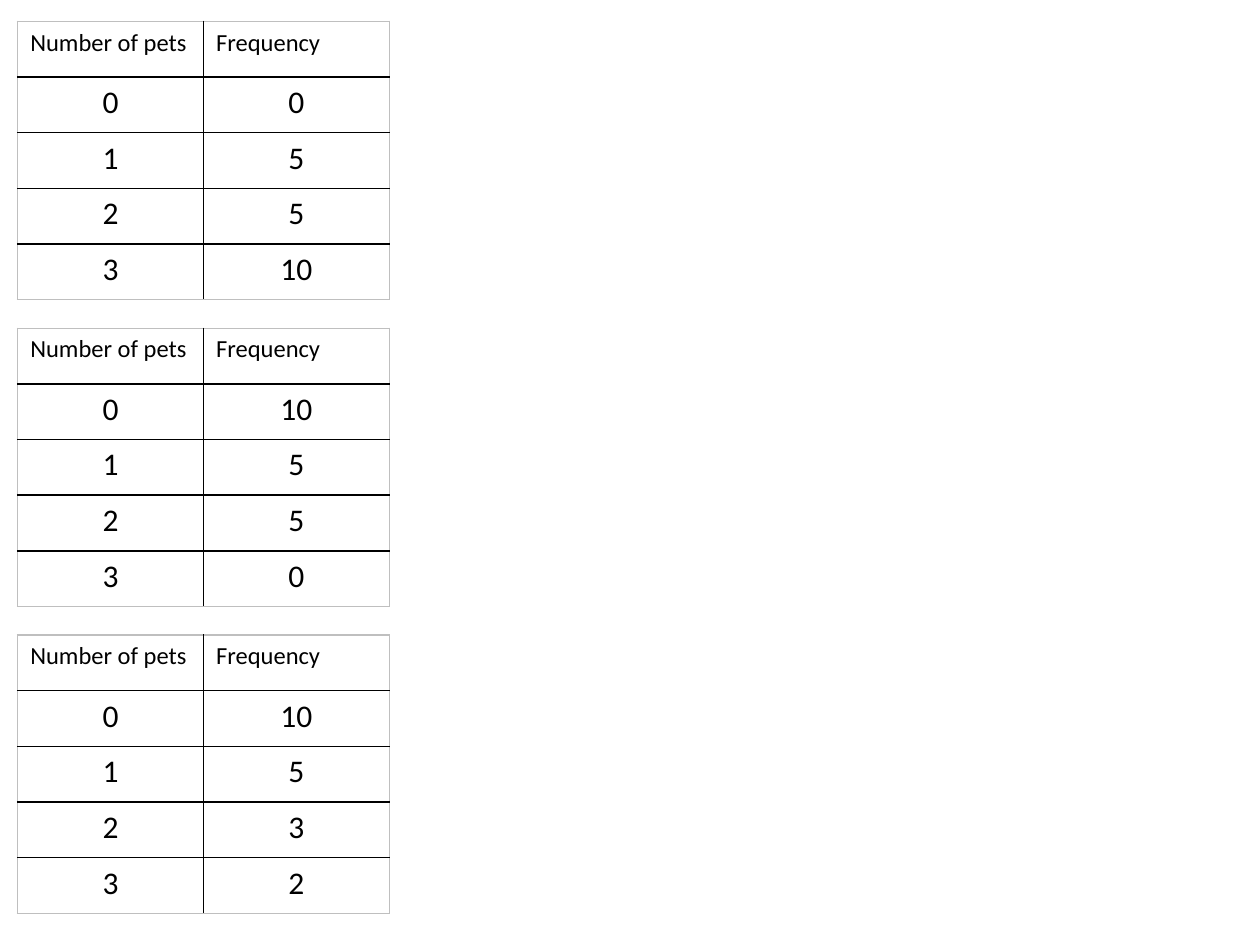
from pptx import Presentation
from pptx import util as u
from pptx.dml.color import RGBColor
from pptx.enum import text
from pptx.oxml import parse_xml
from pptx.oxml.ns import nsdecls

INK, EDGE = "000000", "BFBFBF"
HEADER = ("Number of pets", "Frequency")
FREQUENCIES = [(0, 5, 5, 10), (10, 5, 5, 0), (10, 5, 3, 2)]
LEFT, TOP, PITCH = 0.14, 0.17, 2.435
COLUMN, ROW = 1.475, 0.442


def colour(value):
    return RGBColor.from_string(value)


def set_borders(cell, sides):
    """Draw one-point lines; sides maps L, R, T and B to a colour."""
    properties = cell._tc.get_or_add_tcPr()
    for index, (side, value) in enumerate(sides.items()):
        line = parse_xml(
            f'<a:ln{side} {nsdecls("a")} w="12700"><a:solidFill>'
            f'<a:srgbClr val="{value}"/></a:solidFill></a:ln{side}>')
        properties.insert(index, line)


def write_cell(cell, value, is_header):
    cell.text = str(value)
    para = cell.text_frame.paragraphs[0]
    para.alignment = text.PP_ALIGN.LEFT if is_header else text.PP_ALIGN.CENTER
    font = para.runs[0].font
    formats = {"name": "Calibri", "size": u.Pt(14 if is_header else 18), "bold": False}
    for name, setting in formats.items():
        setattr(font, name, setting)
    font.color.rgb = colour(INK)
    cell.fill.background()


def add_frequency_table(page, box, frequencies):
    rows = [HEADER, *enumerate(frequencies)]
    last_row, last_column = len(rows) - 1, len(HEADER) - 1
    table = page.shapes.add_table(len(rows), len(HEADER), *map(u.Inches, box)).table
    table.first_row = table.horz_banding = False
    for r, values in enumerate(rows):
        for c, value in enumerate(values):
            cell = table.cell(r, c)
            write_cell(cell, value, r == 0)
            set_borders(cell, {
                "L": EDGE if c == 0 else INK,
                "R": EDGE if c == last_column else INK,
                "T": EDGE if r == 0 else INK,
                "B": EDGE if r == last_row else INK,
            })


def main():
    deck = Presentation()
    deck.slide_width, deck.slide_height = u.Inches(10), u.Inches(7.5)
    page = deck.slides.add_slide(deck.slide_layouts[6])
    for index, frequencies in enumerate(FREQUENCIES):
        box = (LEFT, TOP + index * PITCH, len(HEADER) * COLUMN,
               (len(frequencies) + 1) * ROW)
        add_frequency_table(page, box, frequencies)
    deck.save("out.pptx")


if __name__ == "__main__":
    main()
